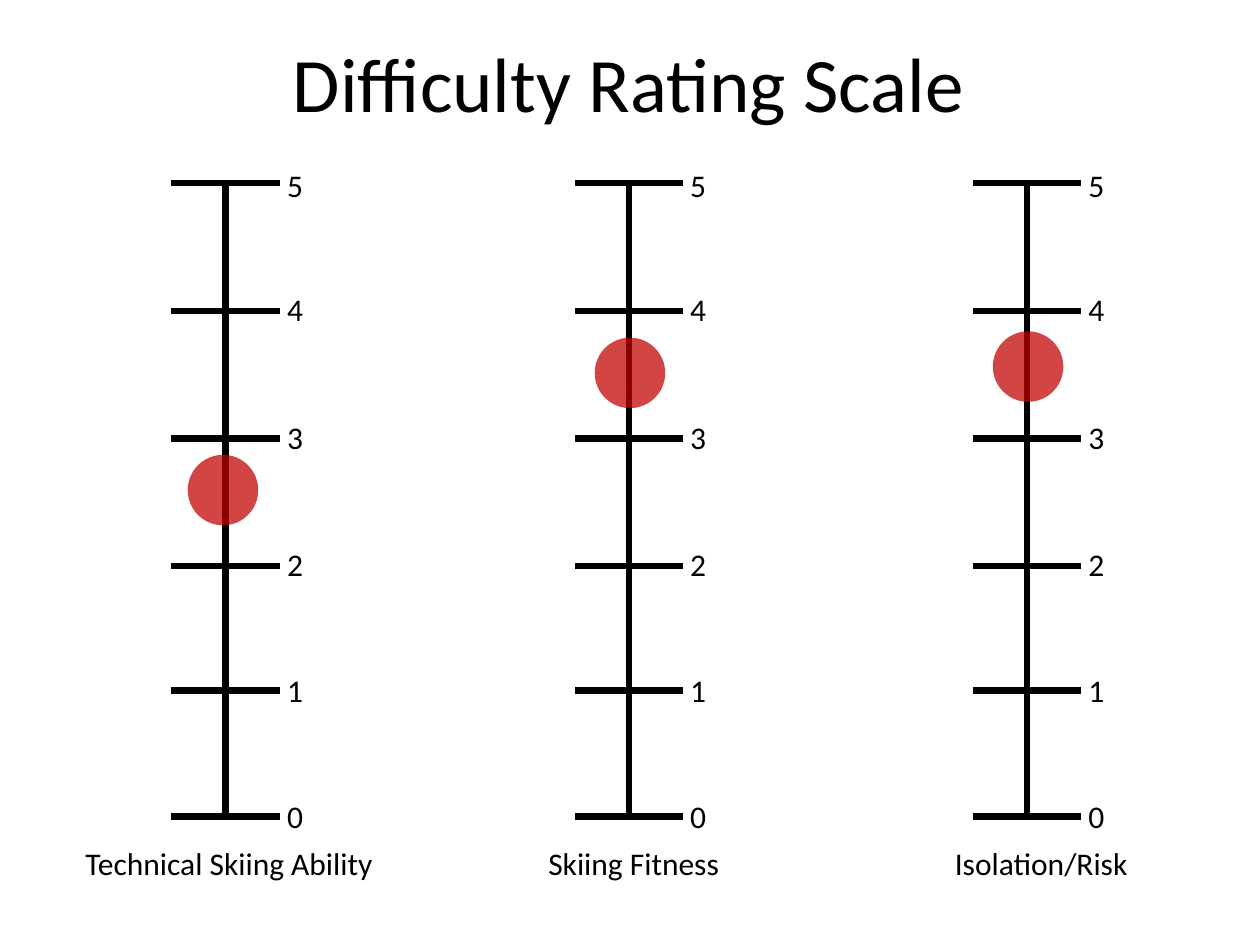
"""Build a slide with three difficulty scales for ski tours."""
from dataclasses import dataclass

from lxml import etree
from pptx import Presentation
from pptx.dml.color import RGBColor
from pptx.enum import shapes, text
from pptx.oxml import ns
from pptx.util import Inches, Pt


@dataclass(frozen=True)
class Theme:
    font: str = "Calibri"
    ink: RGBColor = RGBColor(0, 0, 0)
    marker: RGBColor = RGBColor(0xC0, 0, 0)
    marker_opacity: int = 73
    title_size: int = 44
    text_size: int = 18
    line_width: float = 3.5


THEME = Theme()


def write(shape, wording, size=THEME.text_size, align=text.PP_ALIGN.LEFT,
          anchor=text.MSO_ANCHOR.TOP, fit=text.MSO_AUTO_SIZE.SHAPE_TO_FIT_TEXT):
    frame = shape.text_frame
    frame.word_wrap = True
    frame.auto_size = fit
    frame.vertical_anchor = anchor
    paragraph = frame.paragraphs[0]
    paragraph.alignment = align
    run = paragraph.add_run()
    run.text = wording
    run.font.name = THEME.font
    run.font.size = Pt(size)
    run.font.color.rgb = THEME.ink


def add_line(parent, *ends):
    line = parent.shapes.add_connector(
        shapes.MSO_CONNECTOR.STRAIGHT, *[Inches(end) for end in ends])
    line.line.color.rgb = THEME.ink
    line.line.width = Pt(THEME.line_width)
    etree.SubElement(line._element.spPr, ns.qn("a:effectLst"))


presentation = Presentation()
presentation.slide_width = Inches(10)
presentation.slide_height = Inches(7.5)
slide = presentation.slides.add_slide(presentation.slide_layouts[5])

title = slide.shapes.title
title.left, title.top = Inches(0.49), Inches(0.02)
title.width, title.height = Inches(9), Inches(1.25)
write(title, "Difficulty Rating Scale", size=THEME.title_size,
      align=text.PP_ALIGN.CENTER, anchor=text.MSO_ANCHOR.MIDDLE,
      fit=text.MSO_AUTO_SIZE.NONE)

captions = [
    ("Technical Skiing Ability", 0.58, 2.74, text.PP_ALIGN.LEFT),
    ("Skiing Fitness", 4.06, 1.94, text.PP_ALIGN.CENTER),
    ("Isolation/Risk", 7.48, 1.94, text.PP_ALIGN.LEFT),
]
for wording, left, width, align in captions:
    caption = slide.shapes.add_textbox(
        Inches(left), Inches(6.65), Inches(width), Inches(0.4))
    write(caption, wording, align=align)

ticks = [(5, 1.45, 1.27), (4, 2.47, 2.25), (3, 3.48, 3.27),
         (2, 4.49, 4.28), (1, 5.48, 5.28), (0, 6.48, 6.28)]
half_tick = 0.43
for axis in (1.79, 4.99, 8.15):
    scale = slide.shapes.add_group_shape()
    add_line(scale, axis, 1.45, axis, 6.45)
    for rating, tick_y, label_top in ticks:
        add_line(scale, axis + half_tick, tick_y, axis - half_tick, tick_y)
        label = scale.shapes.add_textbox(
            Inches(axis + 0.39), Inches(label_top), Inches(0.33), Inches(0.4))
        write(label, str(rating))

for left, top in ((7.88, 2.63), (4.72, 2.68), (1.49, 3.61)):
    marker = slide.shapes.add_shape(
        shapes.MSO_SHAPE.OVAL, Inches(left), Inches(top), Inches(0.56), Inches(0.56))
    marker.shadow.inherit = False
    marker.fill.solid()
    marker.fill.fore_color.rgb = THEME.marker
    marker.line.fill.background()
    color = marker._element.spPr.find(".//" + ns.qn("a:srgbClr"))
    etree.SubElement(color, ns.qn("a:alpha"), val=str(THEME.marker_opacity * 1000))

presentation.save("out.pptx")
